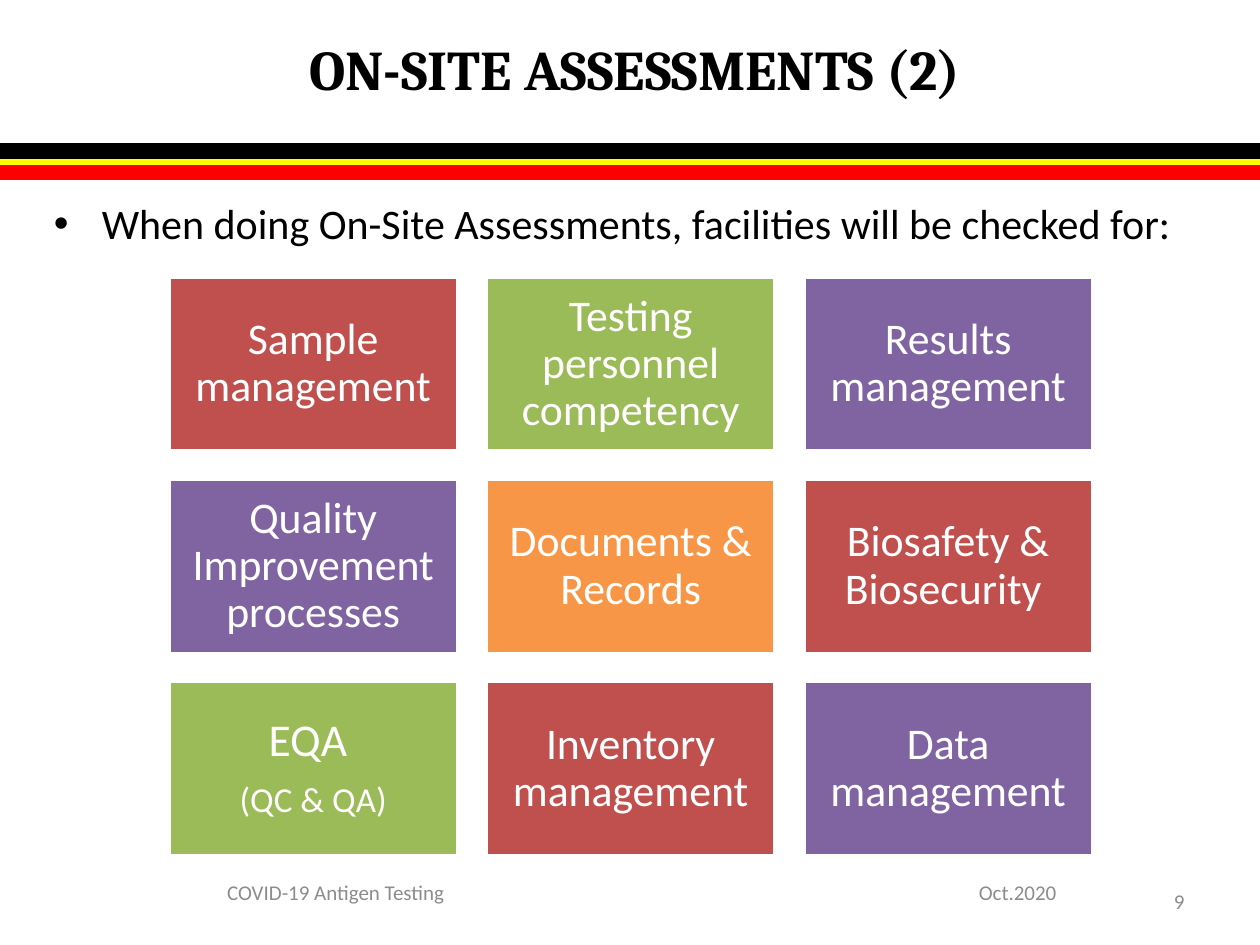
from dataclasses import dataclass

import pptx
import pptx.dml.color
import pptx.enum.shapes
import pptx.enum.text
import pptx.oxml.ns
import pptx.util
from lxml import etree

ALIGN = pptx.enum.text.PP_ALIGN
MIDDLE = pptx.enum.text.MSO_ANCHOR.MIDDLE
TOP = pptx.enum.text.MSO_ANCHOR.TOP


@dataclass(frozen=True)
class Theme:
    heading_font: str = "Cambria"
    body_font: str = "Calibri"
    black: str = "000000"
    white: str = "FFFFFF"
    yellow: str = "FFFF00"
    grey: str = "8C8C8C"
    flag_red: str = "FF0000"
    red: str = "C0504D"
    green: str = "9BBB59"
    purple: str = "8064A2"
    orange: str = "F79646"
    title_size: int = 32
    lead_size: int = 24
    tile_size: int = 25
    headline_size: int = 26
    detail_size: int = 20
    footer_size: int = 12
    stripe_width: int = 9
    border_width: int = 2


@dataclass(frozen=True)
class Grid:
    left: float = 1.34
    top: float = 2.2
    width: float = 2.29
    height: float = 1.38
    column_step: float = 2.52
    row_step: float = 1.605

    def cell(self, column: int, row: int) -> tuple:
        return (self.left + column * self.column_step, self.top + row * self.row_step,
                self.width, self.height)


@dataclass(frozen=True)
class Tile:
    color: str
    text: str
    detail: str = ""


@dataclass(frozen=True)
class Stripe:
    color: str
    height: float


@dataclass(frozen=True)
class Footer:
    text: str
    area: tuple
    align: ALIGN


THEME = Theme()
GRID = Grid()
SLIDE_WIDTH, SLIDE_HEIGHT = 10, 7.5
STRIPES = (Stripe(THEME.yellow, 1.29), Stripe(THEME.flag_red, 1.37), Stripe(THEME.black, 1.2))
TILE_ROWS = (
    (Tile(THEME.red, "Sample management"),
     Tile(THEME.green, "Testing personnel competency"),
     Tile(THEME.purple, "Results management")),
    (Tile(THEME.purple, "Quality Improvement processes"),
     Tile(THEME.orange, "Documents & Records"),
     Tile(THEME.red, "Biosafety & Biosecurity ")),
    (Tile(THEME.green, "EQA ", "(QC & QA)"),
     Tile(THEME.red, "Inventory management"),
     Tile(THEME.purple, "Data management")),
)
FOOTERS = (
    Footer("9", (7.17, 6.95, 2.33, 0.4), ALIGN.RIGHT),
    Footer("Oct.2020", (7.67, 6.88, 2.33, 0.4), ALIGN.LEFT),
    Footer("COVID-19 Antigen Testing", (0, 6.88, 5.33, 0.4), ALIGN.CENTER),
)


def rgb(color: str) -> pptx.dml.color.RGBColor:
    return pptx.dml.color.RGBColor.from_string(color)


def inches(area: tuple) -> list:
    return [pptx.util.Inches(length) for length in area]


def write(para, text: str, *, size: int, color: str, font: str = THEME.body_font,
          bold: bool = False, align: ALIGN = ALIGN.LEFT, line_spacing: float = 1.0,
          space_after: float = 0) -> None:
    para.alignment = align
    para.line_spacing = line_spacing
    para.space_before = pptx.util.Pt(0)
    para.space_after = pptx.util.Pt(space_after)
    span = para.add_run()
    span.text = text
    span.font.name = font
    span.font.size = pptx.util.Pt(size)
    span.font.bold = bold
    span.font.color.rgb = rgb(color)


def add_text_box(page, area: tuple, anchor):
    frame = page.shapes.add_textbox(*inches(area)).text_frame
    frame.word_wrap = True
    frame.vertical_anchor = anchor
    return frame.paragraphs[0]


def set_title(page, text: str) -> None:
    title = page.shapes.title
    title.left, title.top, title.width, title.height = inches((0.33, 0.08, 9.42, 0.92))
    title.text_frame.vertical_anchor = MIDDLE
    write(title.text_frame.paragraphs[0], text, size=THEME.title_size, color=THEME.black,
          font=THEME.heading_font, bold=True, align=ALIGN.CENTER)


def add_stripe(page, stripe: Stripe) -> None:
    ends = inches((0, stripe.height, SLIDE_WIDTH, stripe.height))
    line = page.shapes.add_connector(pptx.enum.shapes.MSO_CONNECTOR.STRAIGHT, *ends)
    line.line.color.rgb = rgb(stripe.color)
    line.line.width = pptx.util.Pt(THEME.stripe_width)
    etree.SubElement(line._element.spPr, pptx.oxml.ns.qn("a:effectLst"))


def add_lead(page, text: str) -> None:
    para = add_text_box(page, (0.33, 1.52, 9.5, 0.55), TOP)
    write(para, text, size=THEME.lead_size, color=THEME.black)
    settings = para._p.get_or_add_pPr()
    indent = pptx.util.Inches(0.38)
    settings.set("marL", str(indent))
    settings.set("indent", str(-indent))
    etree.SubElement(settings, pptx.oxml.ns.qn("a:buFont"), typeface="Arial")
    etree.SubElement(settings, pptx.oxml.ns.qn("a:buChar"), char="•")


def add_tile(page, tile: Tile, column: int, row: int) -> None:
    box = page.shapes.add_shape(pptx.enum.shapes.MSO_SHAPE.RECTANGLE,
                                *inches(GRID.cell(column, row)))
    box.shadow.inherit = False
    box.fill.solid()
    box.fill.fore_color.rgb = rgb(tile.color)
    box.line.color.rgb = rgb(THEME.white)
    box.line.width = pptx.util.Pt(THEME.border_width)
    frame = box.text_frame
    frame.word_wrap = True
    frame.vertical_anchor = MIDDLE
    inset = pptx.util.Inches(0.1)
    frame.margin_left = frame.margin_top = frame.margin_right = frame.margin_bottom = inset
    size = THEME.headline_size if tile.detail else THEME.tile_size
    write(frame.paragraphs[0], tile.text, size=size, color=THEME.white, align=ALIGN.CENTER,
          line_spacing=0.9, space_after=0.35 * size if tile.detail else 0)
    if tile.detail:
        write(frame.add_paragraph(), tile.detail, size=THEME.detail_size, color=THEME.white,
              align=ALIGN.CENTER, line_spacing=0.9)


def main() -> None:
    deck = pptx.Presentation()
    deck.slide_width, deck.slide_height = inches((SLIDE_WIDTH, SLIDE_HEIGHT))
    page = deck.slides.add_slide(deck.slide_layouts.get_by_name("Title Only"))
    for stripe in STRIPES:
        add_stripe(page, stripe)
    set_title(page, "ON-SITE ASSESSMENTS (2)")
    add_lead(page, "When doing On-Site Assessments, facilities will be checked for:")
    for footer in FOOTERS:
        write(add_text_box(page, footer.area, MIDDLE), footer.text, size=THEME.footer_size,
              color=THEME.grey, align=footer.align)
    for row, tiles in enumerate(TILE_ROWS):
        for column, tile in enumerate(tiles):
            add_tile(page, tile, column, row)
    deck.save("out.pptx")


if __name__ == "__main__":
    main()
